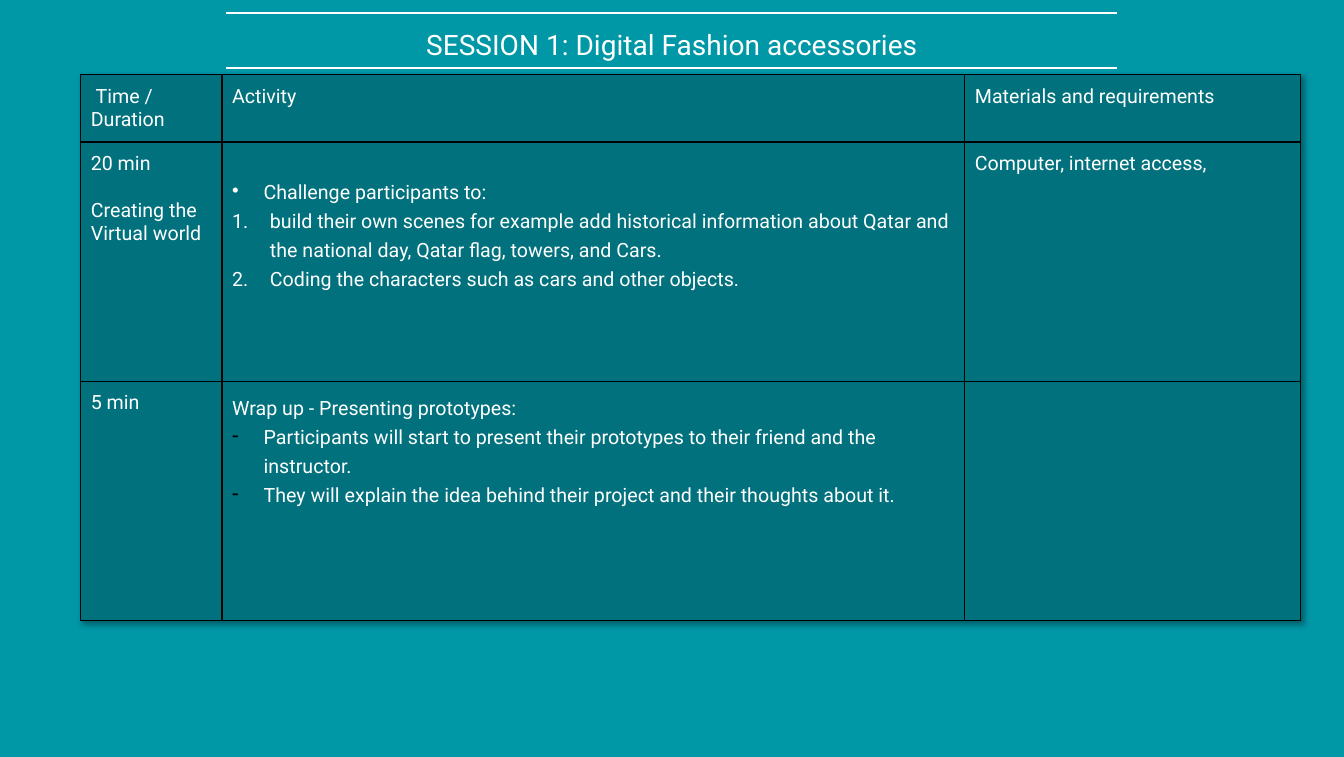
import pptx
import pptx.util
import pptx.dml.color
import pptx.enum.shapes
import pptx.enum.text
import pptx.oxml
import pptx.oxml.ns

Pt = pptx.util.Pt
NS = pptx.oxml.ns.nsdecls("a")
FONT = "Roboto"
WHITE, BLACK, TEAL, DARK_TEAL = "FFFFFF", "000000", "0097A7", "00717D"

BULLET = '<a:buChar {ns} char="•"/>'
NUMBER = '<a:buAutoNum {ns} type="arabicPeriod"/>'
DASH = '<a:buChar {ns} char="-"/>'

COLUMNS = [100.8, 530, 239.7]
ROW_HEIGHTS = [44.6, 170.6, 170.6]
ROWS = [
    [[{"text": "Time / Duration", "first": 3.4}],
     [{"text": "Activity"}],
     [{"text": "Materials and requirements"}]],
    [[{"text": "20 min"},
      {"text": "Creating the Virtual world", "before": 16.8}],
     [{"text": "Challenge participants to:", "mark": BULLET, "hang": 22.5, "spacing": 1.25},
      {"text": "build their own scenes for example add historical information about "
               "Qatar and the national day, Qatar flag, towers, and Cars.",
       "mark": NUMBER, "hang": 27, "spacing": 1.25},
      {"text": "Coding the characters such as cars and other objects.",
       "mark": NUMBER, "hang": 27, "spacing": 1.25}],
     [{"text": "Computer, internet access,"}]],
    [[{"text": "5 min"}],
     [{"text": "Wrap up - Presenting prototypes:", "spacing": 1.25},
      {"text": "Participants will start to present their prototypes to their friend "
               "and the instructor.",
       "mark": DASH, "mark_color": BLACK, "hang": 22.5, "spacing": 1.25},
      {"text": "They will explain the idea behind their project and their thoughts about it.",
       "mark": DASH, "mark_color": BLACK, "hang": 22.5, "spacing": 1.25}],
     []],
]
TOP_MARGINS = {(1, 1): 23.6}


def rgb(value):
    return pptx.dml.color.RGBColor.from_string(value)


def xml(template, **values):
    return pptx.oxml.parse_xml(template.format(ns=NS, **values))


def style_runs(p, size):
    for r in p.runs:
        r.font.size = Pt(size)
        r.font.name = FONT
        r.font.color.rgb = rgb(WHITE)


def add_rule(slide, x, y, width):
    line = slide.shapes.add_connector(
        pptx.enum.shapes.MSO_CONNECTOR.STRAIGHT, Pt(x), Pt(y), Pt(x + width), Pt(y))
    line.line.color.rgb = rgb(WHITE)
    line.line.width = Pt(1.5)
    line._element.spPr.append(xml("<a:effectLst {ns}/>"))


def add_heading(slide, x, y, width, height):
    sp = slide.shapes.add_textbox(Pt(x), Pt(y), Pt(width), Pt(height))
    tf = sp.text_frame
    tf.word_wrap = True
    tf.margin_left = tf.margin_right = tf.margin_top = tf.margin_bottom = Pt(9.6)
    tf.text = "SESSION 1: Digital Fashion accessories"
    p = tf.paragraphs[0]
    p.alignment = pptx.enum.text.PP_ALIGN.CENTER
    style_runs(p, 20)
    for rule_y in (y - 0.7, y + 38.2):
        add_rule(slide, x + 8.6, rule_y, 635.8)


def write_paragraph(p, text, mark=None, mark_color=None, hang=0, first=0, before=0, spacing=None):
    p.text = text
    pPr = p._p.get_or_add_pPr()
    pPr.set("marL", str(Pt(hang)))
    pPr.set("indent", str(Pt(first - hang)))
    if mark_color:
        pPr.append(xml('<a:buClr {ns}><a:srgbClr val="{color}"/></a:buClr>', color=mark_color))
    pPr.append(xml(mark or "<a:buNone {ns}/>"))
    if before:
        p.space_before = Pt(before)
    if spacing:
        p.line_spacing = spacing
    style_runs(p, 14)


def style_cell(cell, top_margin):
    tcPr = cell._tc.get_or_add_tcPr()
    for side in "LRTB":
        tcPr.append(xml(
            '<a:ln{side} {ns} w="{width}"><a:solidFill><a:srgbClr val="{color}"/>'
            "</a:solidFill></a:ln{side}>", side=side, width=Pt(1), color=BLACK))
    cell.fill.solid()
    cell.fill.fore_color.rgb = rgb(DARK_TEAL)
    cell.margin_left = cell.margin_right = cell.margin_bottom = Pt(7.2)
    cell.margin_top = Pt(top_margin)


def add_schedule(slide, x, y):
    table = slide.shapes.add_table(
        len(ROWS), len(COLUMNS), Pt(x), Pt(y), Pt(sum(COLUMNS)), Pt(sum(ROW_HEIGHTS))).table
    table.first_row = table.horz_banding = False
    table._tbl.tblPr.insert(0, xml(
        '<a:effectLst {ns}><a:outerShdw blurRad="{blur}" dist="{dist}" dir="2700000" '
        'algn="tl" rotWithShape="0"><a:srgbClr val="{color}"><a:alpha val="40000"/>'
        "</a:srgbClr></a:outerShdw></a:effectLst>", blur=Pt(4), dist=Pt(3), color=BLACK))
    for column, width in zip(table.columns, COLUMNS):
        column.width = Pt(width)
    for i, (row, height) in enumerate(zip(ROWS, ROW_HEIGHTS)):
        table.rows[i].height = Pt(height)
        for j, paragraphs in enumerate(row):
            cell = table.cell(i, j)
            style_cell(cell, TOP_MARGINS.get((i, j), 7.2))
            tf = cell.text_frame
            for k, content in enumerate(paragraphs):
                write_paragraph(tf.add_paragraph() if k else tf.paragraphs[0], **content)


def main():
    prs = pptx.Presentation()
    prs.slide_width, prs.slide_height = Pt(959), Pt(540)
    slide = prs.slides.add_slide(prs.slide_layouts[6])
    slide.background.fill.solid()
    slide.background.fill.fore_color.rgb = rgb(TEAL)
    add_heading(slide, 152.6, 10.1, 653.8, 67.7)
    add_schedule(slide, 57.6, 53.3)
    prs.save("out.pptx")


if __name__ == "__main__":
    main()
